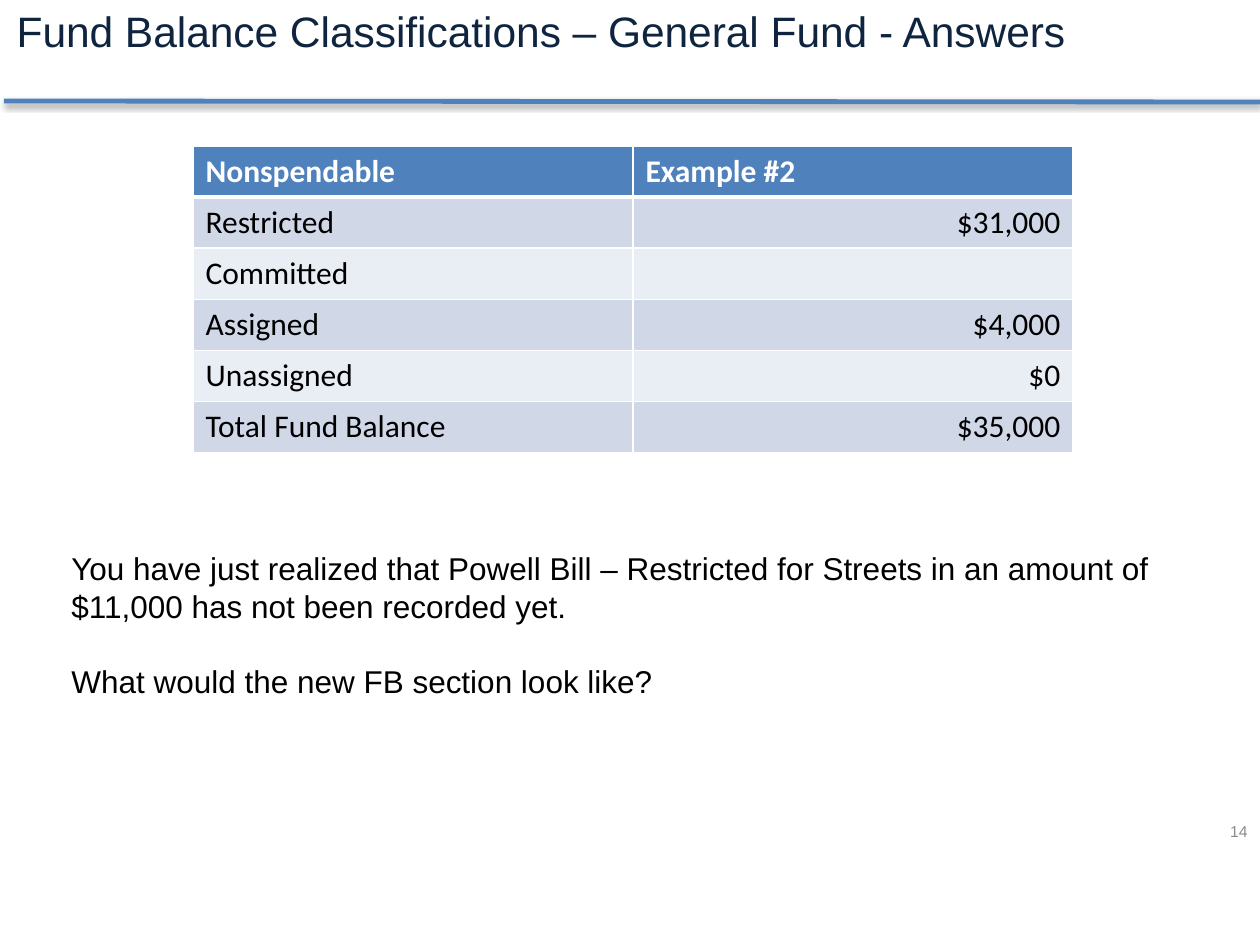
"""Build the slide on general fund balance classifications."""
from lxml import etree
from pptx import Presentation
from pptx.dml.color import RGBColor
from pptx.enum.shapes import MSO_CONNECTOR
from pptx.enum.text import MSO_ANCHOR, PP_ALIGN
from pptx.oxml import parse_xml
from pptx.oxml.ns import nsdecls, qn
from pptx.util import Pt

LEFT, RIGHT = PP_ALIGN.LEFT, PP_ALIGN.RIGHT
TOP, MIDDLE = MSO_ANCHOR.TOP, MSO_ANCHOR.MIDDLE
STRAIGHT = MSO_CONNECTOR.STRAIGHT

TITLE = "Fund Balance Classifications – General Fund - Answers"
ROWS = [
    ("Nonspendable", "Example #2"),
    ("Restricted", "$31,000"),
    ("Committed", ""),
    ("Assigned", "$4,000"),
    ("Unassigned", "$0"),
    ("Total Fund Balance", "$35,000"),
]
QUESTION = [
    "You have just realized that Powell Bill – Restricted for Streets in an amount of "
    "$11,000 has not been recorded yet.",
    "What would the new FB section look like?",
]
PAGE_NUMBER = "14"

THEME = {
    "heading_font": "Arial", "table_font": "Calibri",
    "title_size": 24.3, "body_size": 18, "number_size": 9,
    "navy": "0F243E", "blue": "4F81BD", "white": "FFFFFF", "black": "000000",
    "grey": "8C8C8C", "bands": ("D0D8E8", "E9EDF4"),
}
TITLE_BOX = (4, 0, 1256, 61)
RULE = (4, 101, 1260, 102)
TABLE_BOX = (193, 146, 880, 306)
QUESTION_BOX = (59, 543, 1134, 165)
NUMBER_BOX = (1104, 806, 156, 50)


def px(value):
    return round(value * 914400 / 126)


def color(name):
    return RGBColor.from_string(THEME.get(name, name))


def style(paragraph, size, ink, font="heading_font", bold=False, align=LEFT):
    paragraph.alignment = align
    paragraph.font.name = THEME[font]
    paragraph.font.size = Pt(THEME[size])
    paragraph.font.bold = bold
    paragraph.font.color.rgb = color(ink)


def fill_frame(frame, lines, size, ink, anchor=TOP, align=LEFT, gap=0):
    frame.word_wrap = True
    frame.vertical_anchor = anchor
    frame.text = "\n".join(lines)
    for index, paragraph in enumerate(frame.paragraphs):
        style(paragraph, size, ink, align=align)
        if index:
            paragraph.space_before = Pt(gap)


def add_rule(slide):
    rule = slide.shapes.add_connector(STRAIGHT, *map(px, RULE))
    rule.line.color.rgb = color("blue")
    rule.line.width = Pt(2.75)
    rule._element.spPr.append(parse_xml(
        f'<a:effectLst {nsdecls("a")}>'
        f'<a:outerShdw blurRad="{Pt(3.1)}" dist="{Pt(1.6)}" dir="5400000" rotWithShape="0">'
        f'<a:srgbClr val="{THEME["black"]}"><a:alpha val="38000"/></a:srgbClr>'
        '</a:outerShdw></a:effectLst>'))


def set_borders(cell, widths):
    properties = cell._tc.get_or_add_tcPr()
    for index, (side, width) in enumerate(widths.items()):
        line = etree.Element(qn(f"a:ln{side}"), w=str(Pt(width)))
        fill = etree.SubElement(line, qn("a:solidFill"))
        etree.SubElement(fill, qn("a:srgbClr"), val=THEME["white"])
        properties.insert(index, line)


def add_balance_table(slide):
    frame = slide.shapes.add_table(len(ROWS), len(ROWS[0]), *map(px, TABLE_BOX))
    table = frame.table
    for row_index, values in enumerate(ROWS):
        header = row_index == 0
        fill = "blue" if header else THEME["bands"][(row_index - 1) % 2]
        widths = {"L": 1, "R": 1, "T": 3 if row_index == 1 else 1, "B": 3 if header else 1}
        for column, value in enumerate(values):
            cell = table.cell(row_index, column)
            cell.text = value
            cell.fill.solid()
            cell.fill.fore_color.rgb = color(fill)
            set_borders(cell, widths)
            style(cell.text_frame.paragraphs[0], "body_size",
                  "white" if header else "black", "table_font", header,
                  RIGHT if column and not header else LEFT)


def add_text(slide, box, *arguments, **options):
    shape = slide.shapes.add_textbox(*map(px, box))
    fill_frame(shape.text_frame, *arguments, **options)


def main():
    presentation = Presentation()
    presentation.slide_width, presentation.slide_height = px(1260), px(945)
    slide = presentation.slides.add_slide(presentation.slide_layouts[5])
    add_rule(slide)
    title = slide.shapes.title
    title.left, title.top, title.width, title.height = map(px, TITLE_BOX)
    fill_frame(title.text_frame, [TITLE], "title_size", "navy", MIDDLE)
    add_balance_table(slide)
    add_text(slide, NUMBER_BOX, [PAGE_NUMBER], "number_size", "grey", MIDDLE, RIGHT)
    add_text(slide, QUESTION_BOX, QUESTION, "body_size", "black", gap=21)
    presentation.save("out.pptx")


if __name__ == "__main__":
    main()
